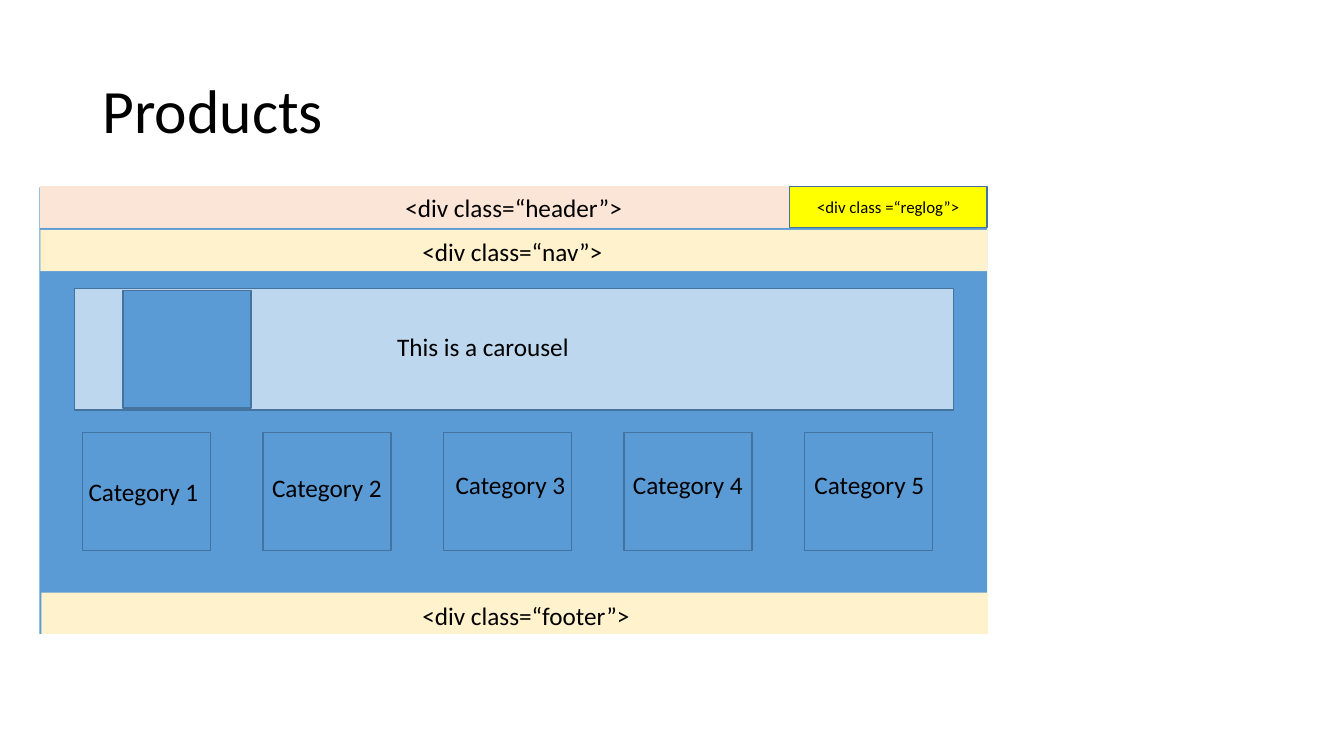
from pptx import Presentation, util as u
from pptx.dml.color import RGBColor
from pptx.enum import shapes, text

PX = 9144
COLOURS = {
    "ink": "000000", "blue": "5B9BD5", "edge": "43739E", "peach": "FBE5D6",
    "cream": "FFF2CC", "yellow": "FFFF00", "sky": "BDD7EE",
}
BLOCK_FRAME = {"word_wrap": True, "vertical_anchor": text.MSO_ANCHOR.MIDDLE}
LABEL_FRAME = {"word_wrap": False, "auto_size": text.MSO_AUTO_SIZE.SHAPE_TO_FIT_TEXT}
CENTRED = {"alignment": text.PP_ALIGN.CENTER}


def px(*lengths):
    """Turn pixel lengths into EMU."""
    return [u.Emu(length * PX) for length in lengths]


def colour(name):
    """Look up a named colour."""
    return RGBColor.from_string(COLOURS[name])


def apply(target, values):
    """Set every attribute in values on the target."""
    for name, value in values.items():
        setattr(target, name, value)


def write(holder, words, size, frame, paragraph):
    """Write one formatted line of text into a shape."""
    apply(holder.text_frame, frame)
    line = holder.text_frame.paragraphs[0]
    apply(line, paragraph)
    run = line.add_run()
    run.text = words
    apply(run.font, {"size": u.Pt(size), "name": "Calibri"})
    run.font.color.rgb = colour("ink")


def add_block(slide, box, fill, edge=None, words="", size=18):
    """Add a filled rectangle with an optional edge and centred text."""
    block = slide.shapes.add_shape(shapes.MSO_SHAPE.RECTANGLE, *px(*box))
    block.shadow.inherit = False
    block.fill.solid()
    block.fill.fore_color.rgb = colour(fill)
    if edge:
        block.line.color.rgb = colour(edge)
        block.line.width = u.Pt(1)
    else:
        block.line.fill.background()
    if words:
        write(block, words, size, BLOCK_FRAME, CENTRED)


def add_label(slide, box, words, size=18, frame=LABEL_FRAME, paragraph=None):
    """Add a text box with one line of text."""
    label = slide.shapes.add_textbox(*px(*box))
    write(label, words, size, frame, paragraph or {})


def add_page_frame(slide):
    """Draw the page panel with its header, nav and footer bands."""
    add_block(slide, (39, 186, 940, 443), "blue")
    add_block(slide, (40, 185, 939, 41), "peach", "peach", "<div class=“header”>")
    add_block(slide, (783, 185, 196, 41), "yellow", "edge", "<div class =“reglog”>", 12)
    add_block(slide, (40, 228, 939, 41), "cream")
    add_label(slide, (409, 230, 201, 40), "<div class=“nav”>")
    add_block(slide, (41, 588, 939, 41), "cream")
    add_label(slide, (409, 591, 228, 40), "<div class=“footer”>")


def add_carousel(slide):
    """Draw the carousel strip and its single item."""
    add_block(slide, (74, 286, 872, 121), "sky", "edge")
    add_block(slide, (122, 288, 127, 117), "blue", "edge")
    add_label(slide, (384, 324, 192, 40), "This is a carousel")


def add_categories(slide):
    """Draw the evenly spaced category tiles and their labels."""
    label_spots = [(78, 468), (260, 464), (442, 461), (618, 461), (798, 461)]
    for index, (left, top) in enumerate(label_spots):
        add_block(slide, (82 + 179 * index, 429, 127, 117), "blue", "edge")
        add_label(slide, (left, top, 130, 40), f"Category {index + 1}")


def main():
    """Build the products page wireframe."""
    deck = Presentation()
    deck.slide_width, deck.slide_height = px(1333, 750)
    slide = deck.slides.add_slide(deck.slide_layouts[6])
    add_label(slide, (92, 40, 1150, 145), "Products", 44, BLOCK_FRAME, {"line_spacing": 0.9})
    add_page_frame(slide)
    add_carousel(slide)
    add_categories(slide)
    deck.save("out.pptx")


if __name__ == "__main__":
    main()
